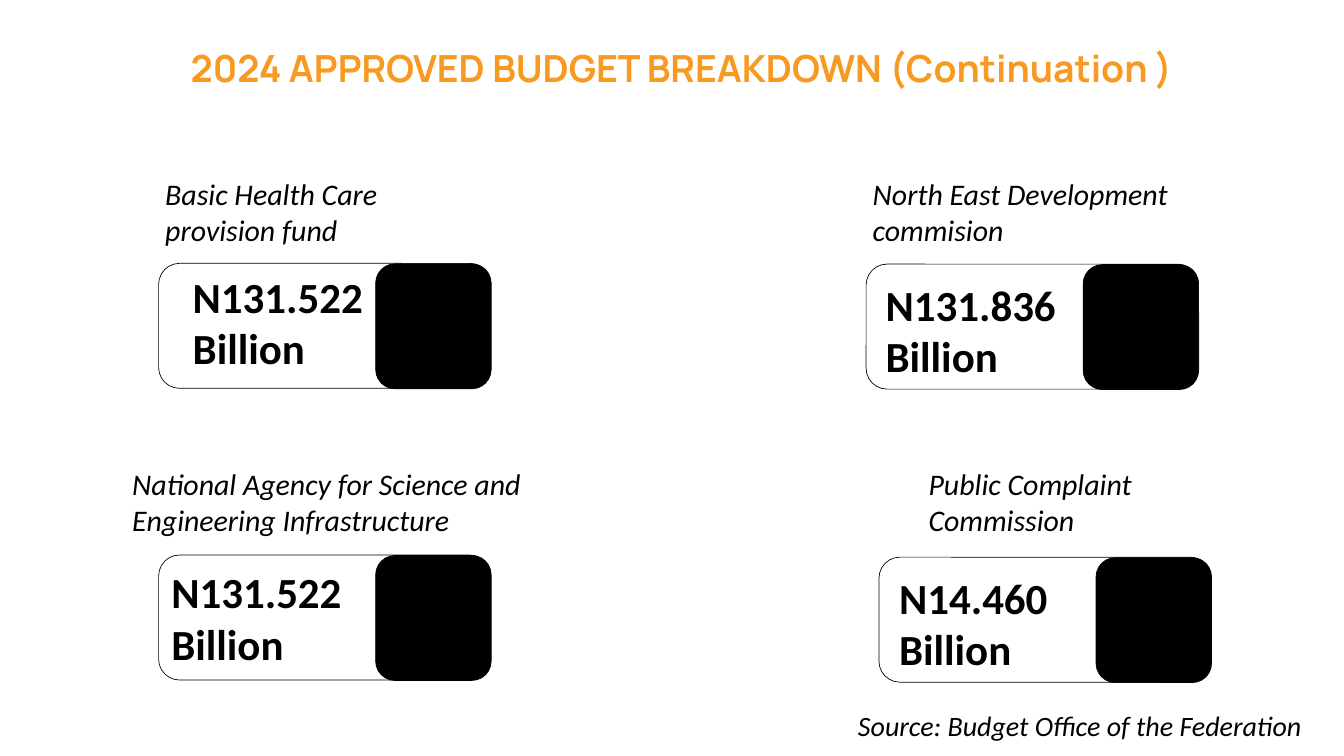
from pptx import Presentation
from pptx.util import Pt
from pptx.dml.color import RGBColor
from pptx.enum.shapes import MSO_SHAPE
from pptx.enum.text import MSO_ANCHOR, PP_ALIGN

HUES = {"title": "F89921", "ink": "000000", "page": "FFFFFF"}
PAD = 7.2
HIGH = 133.9
WIDE = 355.7
DARK = 123.8
SHIFT = 232.5


class Deck:
    def __init__(self):
        self.show = Presentation()
        self.show.slide_width = Pt(1440)
        self.show.slide_height = Pt(810)
        self.slide = self.show.slides.add_slide(self.show.slide_layouts[6])
        fill = self.slide.background.fill
        fill.solid()
        fill.fore_color.rgb = self.hue("page")

    def hue(self, name):
        return RGBColor.from_string(HUES[name])

    def label(self, shape, text, size, hue="ink", face="Calibri", bold=False,
              slant=False, align=PP_ALIGN.LEFT, space=None):
        frame = shape.text_frame
        frame.word_wrap = True
        frame.margin_left = frame.margin_right = Pt(PAD)
        frame.margin_top = frame.margin_bottom = Pt(PAD)
        frame.text = text
        for para in frame.paragraphs:
            para.alignment = align
            if space:
                para.line_spacing = space
            for run in para.runs:
                font = run.font
                font.name = face
                font.size = Pt(size)
                font.bold = bold
                font.italic = slant
                font.color.rgb = self.hue(hue)

    def text(self, left, top, width, height, words, size, **style):
        box = self.slide.shapes.add_textbox(
            Pt(left), Pt(top), Pt(width), Pt(height))
        self.label(box, words, size, **style)

    def panel(self, left, top, width, solid=False):
        shape = self.slide.shapes.add_shape(
            MSO_SHAPE.ROUNDED_RECTANGLE, Pt(left), Pt(top), Pt(width), Pt(HIGH))
        shape.adjustments[0] = 0.167
        shape.shadow.inherit = False
        if solid:
            shape.fill.solid()
            shape.fill.fore_color.rgb = self.hue("ink")
        else:
            shape.fill.background()
        shape.line.color.rgb = self.hue("ink")
        shape.line.width = Pt(0.75)
        return shape

    def card(self, left, top, value, spot):
        shape = self.panel(left, top, WIDE)
        self.panel(left + SHIFT, top + 0.5, DARK, True)
        if spot:
            self.text(*spot, 202.3, 126, value, 46, bold=True)
        else:
            self.label(shape, value, 46, bold=True)
            shape.text_frame.vertical_anchor = MSO_ANCHOR.MIDDLE


def main():
    deck = Deck()
    deck.text(108, 31.7, 1252, 63.4,
              "2024 APPROVED BUDGET BREAKDOWN (Continuation ) ", 40,
              hue="title", face="Manrope", bold=True,
              align=PP_ALIGN.CENTER, space=1.2)
    cards = [
        (170, 282.2, "N131.522\nBillion", (199.4, 282.2)),
        (170, 594.7, "N131.522\nBillion", None),
        (928, 283, "N131.836\nBillion", (941.8, 290.9)),
        (941.8, 597, "N14.460\nBillion", (956.2, 604.8)),
    ]
    for card in cards:
        deck.card(*card)
    labels = [
        (170, 180.7, 331.2, "Basic Health Care provision fund"),
        (134.6, 491.8, 514.8,
         "National Agency for Science and Engineering Infrastructure"),
        (928, 180.7, 544.3, "North East Development\ncommision"),
        (987.8, 491.8, 236.2, "Public Complaint Commission"),
    ]
    for left, top, width, words in labels:
        deck.text(left, top, width, 92.2, words, 32, slant=True)
    deck.text(912.2, 752.4, 687.6, 51.1,
              "Source: Budget Office of the Federation", 30, slant=True)
    deck.show.save("out.pptx")


if __name__ == "__main__":
    main()
